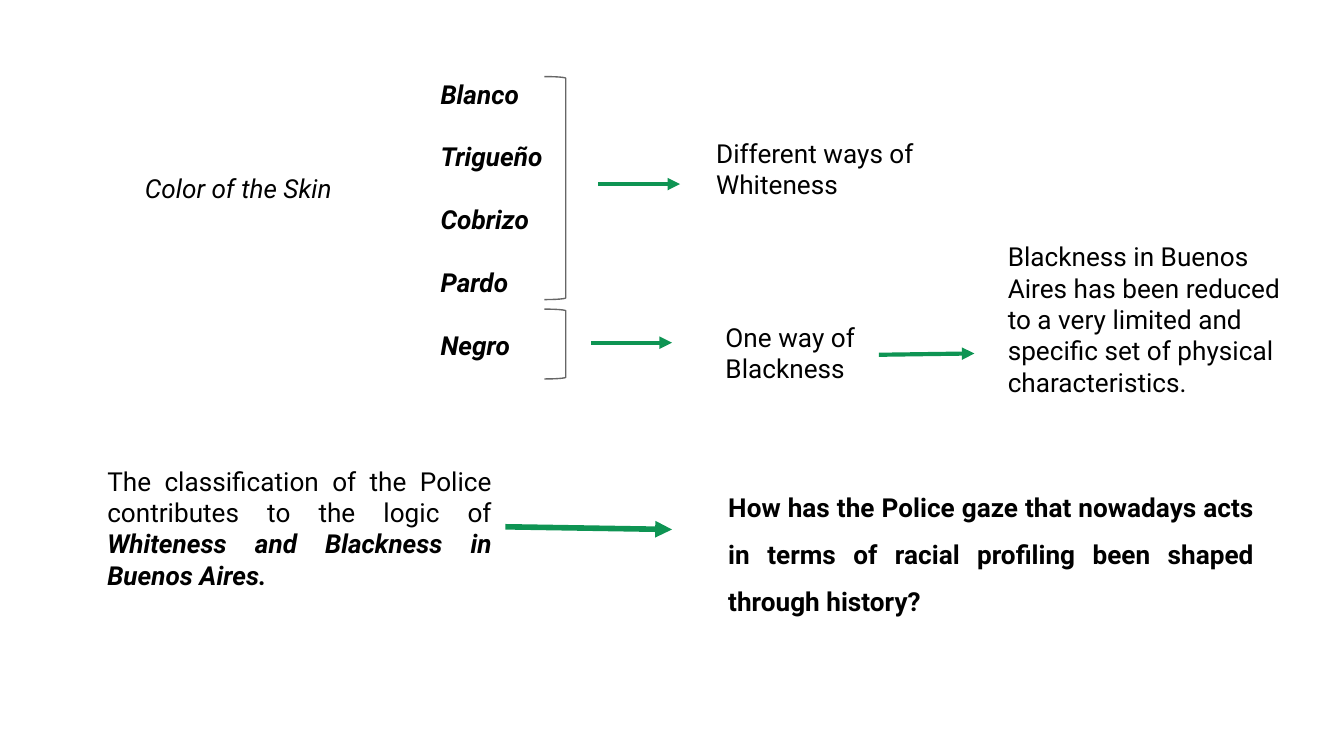
from dataclasses import dataclass

from pptx import Presentation
from pptx.dml.color import RGBColor
from pptx.enum.shapes import MSO_CONNECTOR, MSO_SHAPE
from pptx.enum.text import PP_ALIGN
from pptx.oxml.ns import qn
from pptx.util import Inches, Pt
from lxml.etree import SubElement


@dataclass(frozen=True)
class Theme:
    """Colours, font and sizes used across the slide."""
    ink: RGBColor = RGBColor(0x00, 0x00, 0x00)
    arrow: RGBColor = RGBColor(0x0E, 0x94, 0x53)
    bracket: RGBColor = RGBColor(0x66, 0x66, 0x66)
    font: str = "Roboto"
    body: Pt = Pt(14)
    term_gap: Pt = Pt(16.9)
    arrow_width: Pt = Pt(2.25)
    strong_arrow_width: Pt = Pt(3)
    bracket_width: Pt = Pt(0.75)


THEME = Theme()


def add_run(paragraph, wording, bold=False, italic=False):
    """Append one styled run to a paragraph."""
    run = paragraph.add_run()
    run.text = wording
    run.font.name = THEME.font
    run.font.size = THEME.body
    run.font.color.rgb = THEME.ink
    run.font.bold = bold
    run.font.italic = italic


def add_text(slide, box, paragraphs, align=PP_ALIGN.LEFT, spacing=1.0, gap=Pt(0)):
    """Add a wrapped text box; each paragraph is a list of run arguments."""
    frame = slide.shapes.add_textbox(*map(Inches, box)).text_frame
    frame.word_wrap = True
    frame.margin_left = frame.margin_right = Inches(0.1)
    frame.margin_top = frame.margin_bottom = Inches(0.1)
    for index, runs in enumerate(paragraphs):
        paragraph = frame.add_paragraph() if index else frame.paragraphs[0]
        paragraph.alignment = align
        paragraph.line_spacing = spacing
        paragraph.space_before = gap if index else Pt(0)
        for run in runs:
            add_run(paragraph, *run)


def add_arrow(slide, start, end, width=THEME.arrow_width):
    """Add a green arrow pointing at its end."""
    arrow = slide.shapes.add_connector(
        MSO_CONNECTOR.STRAIGHT, *map(Inches, (*start, *end)))
    arrow.line.color.rgb = THEME.arrow
    arrow.line.width = width
    SubElement(arrow.line._get_or_add_ln(), qn("a:tailEnd"), type="triangle")
    SubElement(arrow._element.spPr, qn("a:effectLst"))


def add_bracket(slide, top, height):
    """Add a right bracket that groups skin color terms."""
    bracket = slide.shapes.add_shape(
        MSO_SHAPE.RIGHT_BRACKET, *map(Inches, (4.05, top, 0.16, height)))
    bracket.adjustments[0] = 0.08
    bracket.shadow.inherit = False
    bracket.fill.background()
    bracket.line.color.rgb = THEME.bracket
    bracket.line.width = THEME.bracket_width


def add_skin_terms(slide):
    """Add the terms, their brackets and what each group leads to."""
    terms = ["Blanco", "Trigueño", "Cobrizo", "Pardo", "Negro"]
    add_text(slide, (0.98, 1.18, 2.26, 0.43), [[("Color of the Skin", False, True)]])
    add_text(slide, (3.18, 0.48, 1.7, 2.45),
             [[(term, True, True)] for term in terms], gap=THEME.term_gap)
    add_bracket(slide, 0.57, 1.66)
    add_arrow(slide, (4.45, 1.37), (5.06, 1.37))
    add_text(slide, (5.23, 0.92, 2.17, 0.64), [[("Different ways of Whiteness",)]])
    add_bracket(slide, 2.3, 0.52)
    add_arrow(slide, (4.4, 2.55), (5, 2.55))
    add_text(slide, (5.3, 2.29, 1.24, 0.71), [[("One way of Blackness",)]])
    add_arrow(slide, (6.54, 2.64), (7.25, 2.63))
    add_text(slide, (7.4, 1.69, 2.42, 1.3), [
        [("Blackness in Buenos Aires has been reduced to a very limited "
          "and specific set of physical",)],
        [("characteristics.",)],
    ])


def add_police_question(slide):
    """Add the police classification and the question it raises."""
    add_text(slide, (0.7, 3.36, 3.06, 1.14), [[
        ("The classification of the Police contributes to the logic of ",),
        ("Whiteness and Blackness in Buenos Aires.", True, True),
    ]], align=PP_ALIGN.JUSTIFY)
    add_arrow(slide, (3.76, 3.92), (5, 3.94), THEME.strong_arrow_width)
    add_text(slide, (5.32, 3.44, 4.11, 1.4), [[
        ("How has the Police gaze that nowadays acts in terms of racial "
         "profiling been shaped through history?", True),
    ]], align=PP_ALIGN.JUSTIFY, spacing=1.5)


def main():
    """Build and save the slide."""
    deck = Presentation()
    deck.slide_width = Inches(10)
    deck.slide_height = Inches(10 * 9 / 16)
    slide = deck.slides.add_slide(deck.slide_layouts[6])
    add_skin_terms(slide)
    add_police_question(slide)
    deck.save("out.pptx")


if __name__ == "__main__":
    main()
